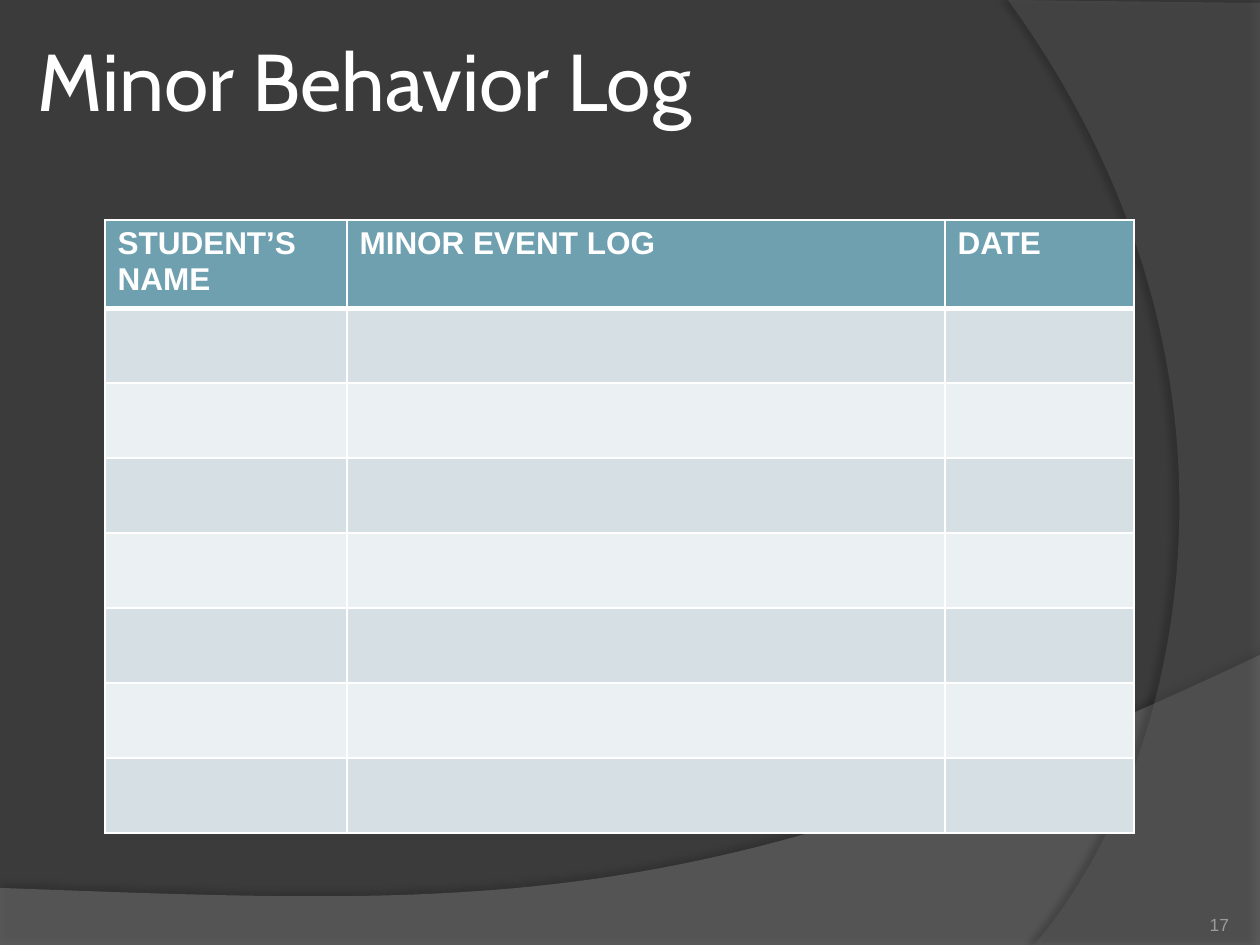
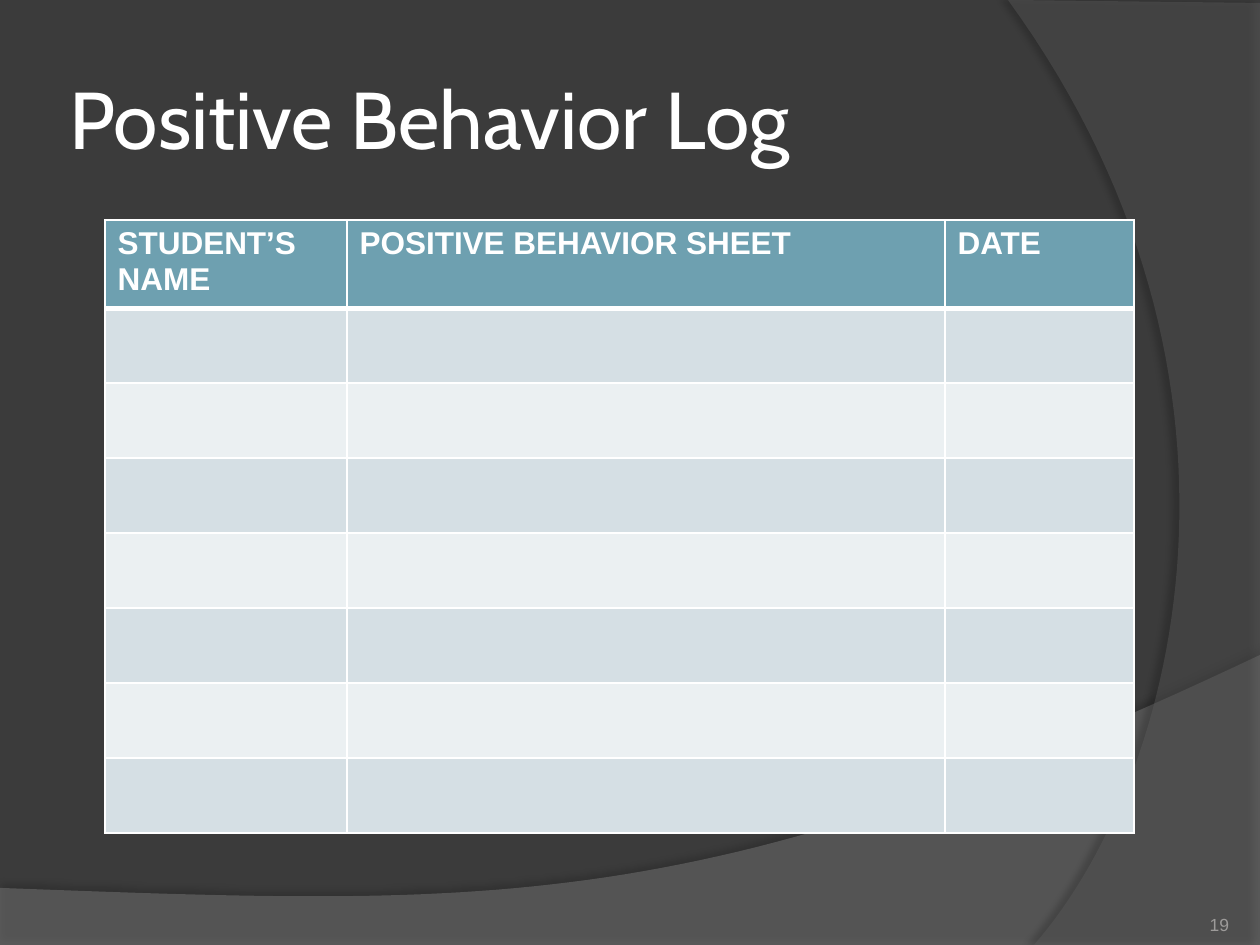
from dataclasses import dataclass
from typing import NamedTuple

from lxml.etree import SubElement
from pptx import Presentation
from pptx.dml.color import RGBColor
from pptx.enum.text import MSO_ANCHOR, PP_ALIGN
from pptx.oxml.ns import qn
from pptx.slide import Slide
from pptx.table import _Cell
from pptx.util import Emu, Pt

EMU_PER_PX = 914400 / 126
CURVE_STEPS = 60


@dataclass(frozen=True)
class Theme:
    background: str = "3B3B3B"
    white: str = "FFFFFF"
    header: str = "6EA0B0"
    row_bands: tuple[str, str] = ("D5DFE4", "EBF0F2")
    page_number: str = "9D9B9A"
    shadow: str = "000000"
    title_font: str = "Cabin"
    body_font: str = "Arial"
    title_size: int = 46
    header_size: int = 18
    page_number_size: int = 10
    grid_width: int = 1
    header_rule_width: int = 3


class Point(NamedTuple):
    x: int
    y: int


class Box(NamedTuple):
    left: int
    top: int
    width: int
    height: int


class TextStyle(NamedTuple):
    font: str
    size: int
    color: str
    bold: bool = False
    align: PP_ALIGN = PP_ALIGN.LEFT


class Shadow(NamedTuple):
    opacity: int
    blur: float
    distance: float
    angle: int


@dataclass(frozen=True)
class Swoosh:
    corners: tuple[Point, ...]
    handles: tuple[Point, Point]
    curve_end: Point
    color: str
    opacity: int
    shadow: Shadow


@dataclass(frozen=True)
class LogSlide:
    title: str
    title_at: Point
    event_heading: str
    page_number: str


THEME = Theme()
TITLE_STYLE = TextStyle(THEME.title_font, THEME.title_size, THEME.white)
HEADER_STYLE = TextStyle(THEME.body_font, THEME.header_size, THEME.white, bold=True)
PAGE_STYLE = TextStyle(
    THEME.body_font, THEME.page_number_size, THEME.page_number, align=PP_ALIGN.RIGHT
)

SLIDE_WIDTH, SLIDE_HEIGHT = 1260, 945
TITLE_WIDTH, TITLE_HEIGHT, TITLE_INSET = 1030, 158, 6
PAGE_NUMBER_BOX = Box(1124, 885, 105, 50)
TABLE_AT = Point(105, 220)
COLUMN_WIDTHS = (242, 598, 189)
HEADER_HEIGHT, ROW_HEIGHT, BLANK_ROWS = 82, 75, 7

SWOOSHES = (
    Swoosh(
        (Point(0, 888), Point(0, 945), Point(1260, 945), Point(1260, 655)),
        (Point(704, 919), Point(493, 906)),
        Point(0, 888),
        "7F7F7F",
        45,
        Shadow(35, 4, 3.5, 270),
    ),
    Swoosh(
        (Point(1260, 3), Point(1260, 945), Point(1034, 945)),
        (Point(1178, 780), Point(1283, 378)),
        Point(1008, 0),
        "5E5E5E",
        40,
        Shadow(45, 4, 4, 180),
    ),
)

LOGS = (
    LogSlide("Minor Behavior Log", Point(32, 0), "MINOR EVENT LOG", "17"),
    LogSlide("Positive Behavior Log", Point(63, 38), "POSITIVE BEHAVIOR SHEET", "19"),
)


def px(length: float) -> Emu:
    return Emu(round(length * EMU_PER_PX))


def rgb(color: str) -> RGBColor:
    return RGBColor.from_string(color)


def curve_points(swoosh: Swoosh) -> list[tuple[int, int]]:
    anchors = (swoosh.corners[-1], *swoosh.handles, swoosh.curve_end)
    points = []
    for step in range(1, CURVE_STEPS + 1):
        t = step / CURVE_STEPS
        weights = ((1 - t) ** 3, 3 * t * (1 - t) ** 2, 3 * t**2 * (1 - t), t**3)
        x = sum(weight * anchor.x for weight, anchor in zip(weights, anchors))
        y = sum(weight * anchor.y for weight, anchor in zip(weights, anchors))
        points.append((px(x), px(y)))
    return points


def draw_swoosh(slide: Slide, swoosh: Swoosh) -> None:
    start, *corners = [(px(corner.x), px(corner.y)) for corner in swoosh.corners]
    builder = slide.shapes.build_freeform(*start)
    builder.add_line_segments(corners + curve_points(swoosh), close=True)
    band = builder.convert_to_shape()
    band.line.fill.background()
    band.fill.solid()
    band.fill.fore_color.rgb = rgb(swoosh.color)
    properties = band.element.spPr
    fill_color = properties.find(qn("a:solidFill")).find(qn("a:srgbClr"))
    SubElement(fill_color, qn("a:alpha"), val=str(swoosh.opacity * 1000))

    band.shadow.inherit = False
    shadow = SubElement(
        properties.find(qn("a:effectLst")),
        qn("a:outerShdw"),
        blurRad=str(Pt(swoosh.shadow.blur)),
        dist=str(Pt(swoosh.shadow.distance)),
        dir=str(swoosh.shadow.angle * 60000),
        rotWithShape="0",
    )
    shadow_color = SubElement(shadow, qn("a:srgbClr"), val=THEME.shadow)
    SubElement(shadow_color, qn("a:alpha"), val=str(swoosh.opacity_of_shadow * 1000)
               if hasattr(swoosh, "opacity_of_shadow") else str(swoosh.shadow.opacity * 1000))


def write(frame, text: str, style: TextStyle) -> None:
    paragraph = frame.paragraphs[0]
    paragraph.text = text
    paragraph.alignment = style.align
    paragraph.font.name = style.font
    paragraph.font.size = Pt(style.size)
    paragraph.font.bold = style.bold
    paragraph.font.color.rgb = rgb(style.color)


def draw_text(
    slide: Slide, box: Box, text: str, style: TextStyle, anchor: MSO_ANCHOR, inset: int
) -> None:
    frame = slide.shapes.add_textbox(*map(px, box)).text_frame
    frame.word_wrap = True
    frame.vertical_anchor = anchor
    frame.margin_left = frame.margin_right = px(inset)
    frame.margin_top = frame.margin_bottom = px(inset)
    write(frame, text, style)


def paint_cell(cell: _Cell, fill: str, top: int, bottom: int) -> None:
    properties = cell._tc.get_or_add_tcPr()
    grid = THEME.grid_width
    for side, width in (("L", grid), ("R", grid), ("T", top), ("B", bottom)):
        border = SubElement(properties, qn(f"a:ln{side}"), w=str(Pt(width)))
        paint = SubElement(border, qn("a:solidFill"))
        SubElement(paint, qn("a:srgbClr"), val=THEME.white)
    cell.fill.solid()
    cell.fill.fore_color.rgb = rgb(fill)


def draw_log_table(slide: Slide, event_heading: str) -> None:
    headings = ("STUDENT’S NAME", event_heading, "DATE")
    row_heights = (HEADER_HEIGHT, *[ROW_HEIGHT] * BLANK_ROWS)
    box = Box(*TABLE_AT, sum(COLUMN_WIDTHS), sum(row_heights))
    log = slide.shapes.add_table(
        len(row_heights), len(headings), *map(px, box)
    ).table
    for column, width in zip(log.columns, COLUMN_WIDTHS):
        column.width = px(width)
    for index, (row, height) in enumerate(zip(log.rows, row_heights)):
        row.height = px(height)
        fill = THEME.row_bands[(index - 1) % 2] if index else THEME.header
        top = THEME.header_rule_width if index == 1 else THEME.grid_width
        bottom = THEME.header_rule_width if index == 0 else THEME.grid_width
        for cell in row.cells:
            paint_cell(cell, fill, top, bottom)
    for cell, heading in zip(log.rows[0].cells, headings):
        write(cell.text_frame, heading, HEADER_STYLE)


def draw_log_slide(slide: Slide, log: LogSlide) -> None:
    slide.background.fill.solid()
    slide.background.fill.fore_color.rgb = rgb(THEME.background)
    for swoosh in SWOOSHES:
        draw_swoosh(slide, swoosh)
    title_box = Box(*log.title_at, TITLE_WIDTH, TITLE_HEIGHT)
    draw_text(slide, title_box, log.title, TITLE_STYLE, MSO_ANCHOR.MIDDLE, TITLE_INSET)
    draw_log_table(slide, log.event_heading)
    draw_text(slide, PAGE_NUMBER_BOX, log.page_number, PAGE_STYLE, MSO_ANCHOR.BOTTOM, 0)


def main() -> None:
    presentation = Presentation()
    presentation.slide_width = px(SLIDE_WIDTH)
    presentation.slide_height = px(SLIDE_HEIGHT)
    blank = presentation.slide_layouts[6]
    for log in LOGS:
        draw_log_slide(presentation.slides.add_slide(blank), log)
    presentation.save("out.pptx")


if __name__ == "__main__":
    main()
